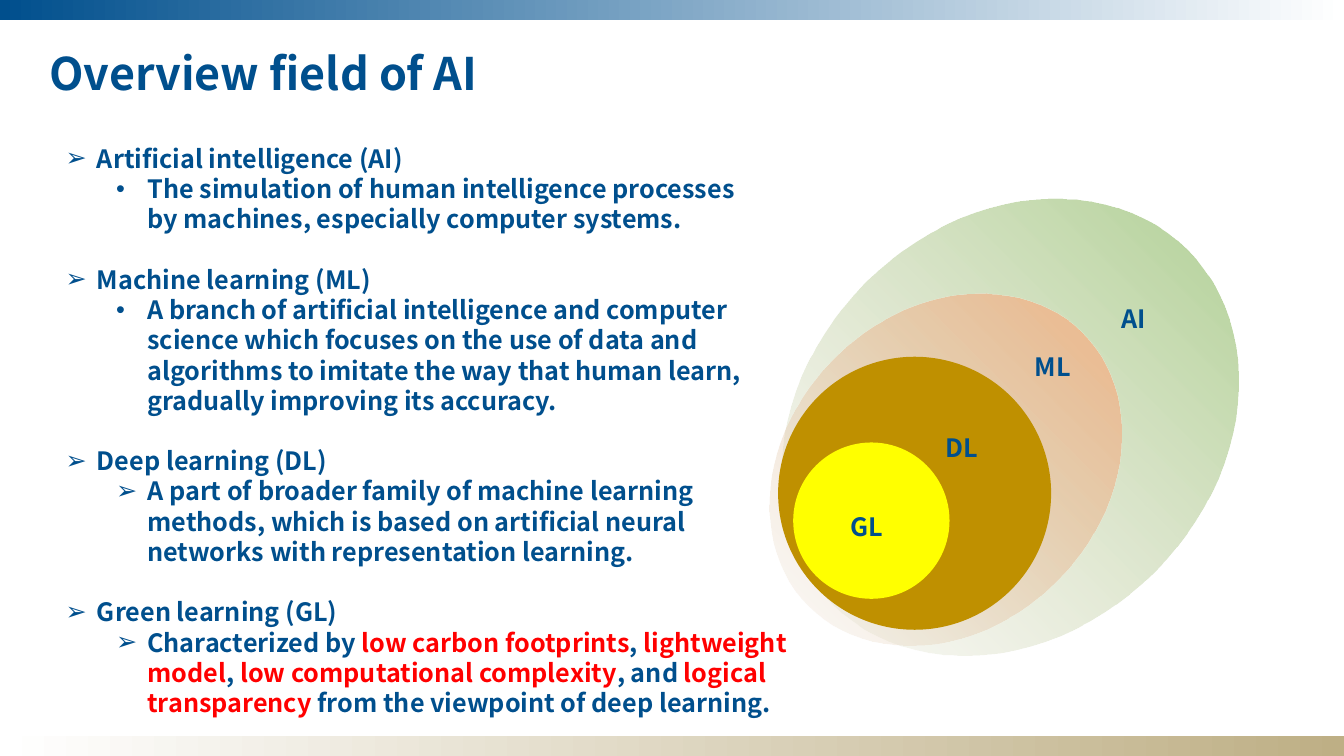
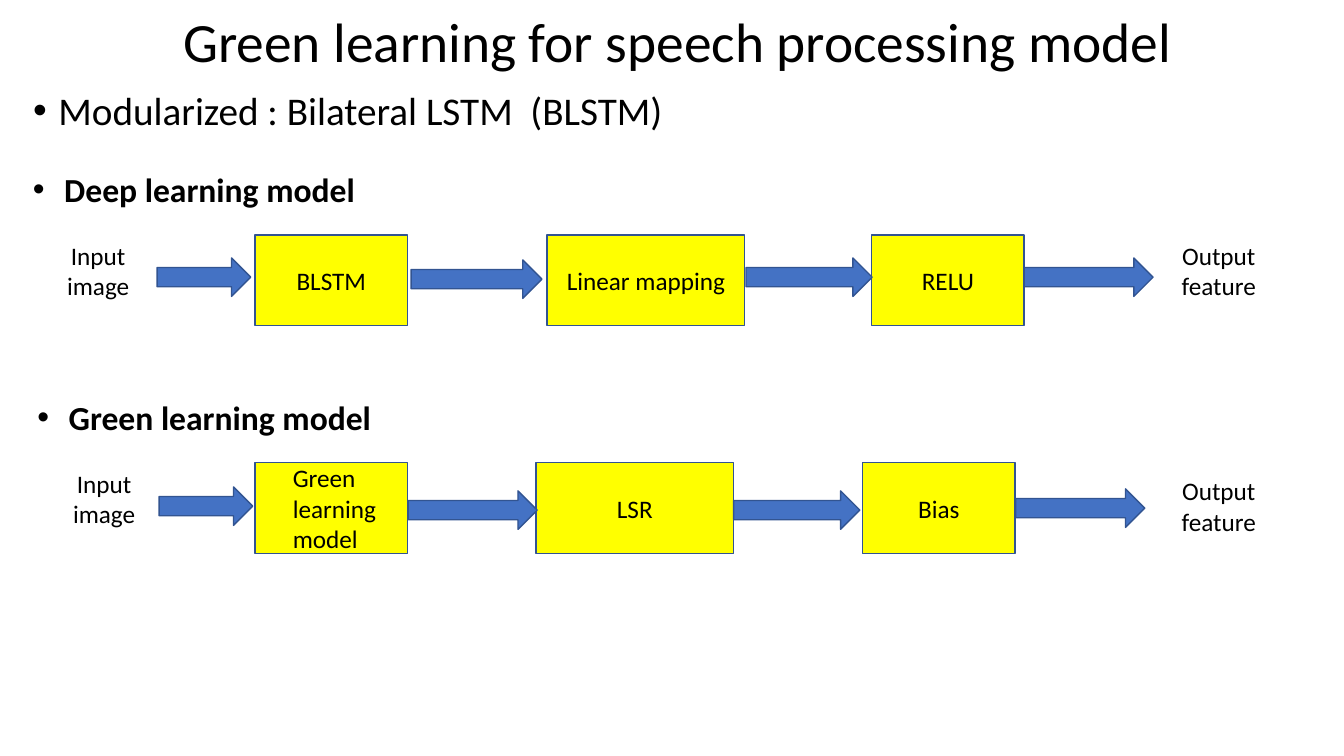
from lxml import etree
from pptx import Presentation
from pptx.dml.color import RGBColor
from pptx.enum import shapes, text
from pptx.oxml import ns
from pptx.util import Cm, Pt

# Shared colours, fonts and sizes
NAVY = RGBColor(0x00, 0x4F, 0x8D)
SAND = RGBColor(0xBE, 0xAF, 0x85)
PALE_SAND = RGBColor(0xDE, 0xD6, 0xC1)
GREEN = RGBColor(0xA9, 0xD1, 0x8E)
ORANGE = RGBColor(0xF4, 0xB1, 0x83)
GOLD = RGBColor(0xBF, 0x90, 0x00)
YELLOW = RGBColor(0xFF, 0xFF, 0x00)
BLUE = RGBColor(0x44, 0x72, 0xC4)
OUTLINE = RGBColor(0x32, 0x54, 0x91)
RED = RGBColor(0xFF, 0x00, 0x00)
BLACK = RGBColor(0x00, 0x00, 0x00)
WHITE = RGBColor(0xFF, 0xFF, 0xFF)

NOTO = "Noto Sans CJK SC"
CALIBRI = "Calibri"
SLIDE_WIDTH, SLIDE_HEIGHT, BAND_HEIGHT = 33.87, 19.05, 0.51
BOX_HEIGHT, ARROW_HEIGHT = 2.29, 0.97

SHAPE = shapes.MSO_SHAPE
ALIGN = text.PP_ALIGN
ANCHOR = text.MSO_ANCHOR

# Text styles: font name, size, colour, bold
OVERVIEW_TITLE = (NOTO, 32, NAVY, True)
OVERVIEW_TEXT = (NOTO, 18, NAVY, True)
MODEL_TITLE = (CALIBRI, 39.6, BLACK, False)
MODEL_BODY = (CALIBRI, 28, BLACK, False)
MODEL_HEADING = (CALIBRI, 24, BLACK, True)
MODEL_LABEL = (CALIBRI, 18, BLACK, False)

# Slide 1 content: term, bullet of the explanation, its lines (*red*)
TERMS = [
    ("Artificial intelligence (AI)", "•",
     ["The simulation of human intelligence processes",
      "by machines, especially computer systems."]),
    ("Machine learning (ML)", "•",
     ["A branch of artificial intelligence and computer",
      "science which focuses on the use of data and",
      "algorithms to imitate the way that human learn,",
      "gradually improving its accuracy."]),
    ("Deep learning (DL)", "➢",
     ["A part of broader family of machine learning",
      "methods, which is based on artificial neural",
      "networks with representation learning."]),
    ("Green learning (GL)", "➢",
     ["Characterized by *low carbon footprints*, *lightweight*",
      "*model*, *low computational complexity*, and *logical*",
      "*transparency* from the viewpoint of deep learning."]),
]
FIELD_LABELS = [("GL", 21.18, 12.75), ("DL", 23.57, 10.77),
                ("ML", 25.83, 8.74), ("AI", 28.02, 7.52)]

# Slide 2 content: boxes are (lines, left, width), arrows (left, top, width)
PIPELINES = [
    {"heading": ("Deep learning model", 0.58, 4.14),
     "box_top": 5.92,
     "boxes": [(["BLSTM"], 6.43, 3.84),
               (["Linear mapping"], 13.79, 4.98),
               (["RELU"], 21.97, 3.84)],
     "arrows": [(3.96, 6.5, 2.36), (10.36, 6.55, 3.3),
                (18.8, 6.5, 3.18), (25.81, 6.5, 3.25)],
     "ends": [(["Input", "image"], 1.42, 5.92, 2.11),
              (["Output", "feature"], 29.46, 5.92, 2.51)]},
    {"heading": ("Green learning model", 0.69, 9.88),
     "box_top": 11.66,
     "boxes": [(["Green", "learning", "model"], 6.43, 3.84),
               (["LSR"], 13.51, 4.98),
               (["Bias"], 21.74, 3.84)],
     "arrows": [(4.01, 12.27, 2.36), (10.29, 12.37, 3.25),
                (18.49, 12.37, 3.18), (25.6, 12.32, 3.25)],
     "ends": [(["Input", "image"], 1.57, 11.68, 2.11),
              (["Output", "feature"], 29.46, 11.86, 2.51)]},
]


# Text helpers
def add_run(paragraph, words, style, color=None):
    name, size, style_color, bold = style
    run = paragraph.add_run()
    run.text = words
    run.font.name = name
    run.font.size = Pt(size)
    run.font.bold = bold
    run.font.color.rgb = color or style_color


def set_bullet(paragraph, character, left, hanging):
    properties = paragraph._p.get_or_add_pPr()
    properties.set("marL", str(Cm(left)))
    properties.set("indent", str(-Cm(hanging)))
    etree.SubElement(properties, ns.qn("a:buFont"), typeface="Arial")
    etree.SubElement(properties, ns.qn("a:buChar"), char=character)


def next_paragraph(frame, is_first):
    return frame.paragraphs[0] if is_first else frame.add_paragraph()


def write_lines(frame, lines, style, align=ALIGN.LEFT):
    for index, line in enumerate(lines):
        paragraph = next_paragraph(frame, index == 0)
        paragraph.alignment = align
        add_run(paragraph, line, style)


def add_label(slide, lines, style, left, top, width, height,
              align=ALIGN.LEFT):
    box = slide.shapes.add_textbox(Cm(left), Cm(top), Cm(width), Cm(height))
    box.text_frame.word_wrap = True
    write_lines(box.text_frame, lines, style, align)
    return box


def place_frame(placeholder, left, top, width, height, anchor):
    placeholder.left, placeholder.top = Cm(left), Cm(top)
    placeholder.width, placeholder.height = Cm(width), Cm(height)
    frame = placeholder.text_frame
    frame.word_wrap = True
    frame.auto_size = text.MSO_AUTO_SIZE.NONE
    frame.vertical_anchor = anchor
    return frame


def set_title(slide, words, style, bounds, align):
    frame = place_frame(slide.shapes.title, *bounds, ANCHOR.MIDDLE)
    write_lines(frame, [words], style, align)
    return frame.paragraphs[0]


# Shape helpers
def add_shape(slide, kind, left, top, width, height, fill=None, line=None):
    shape = slide.shapes.add_shape(kind, Cm(left), Cm(top),
                                   Cm(width), Cm(height))
    shape.shadow.inherit = False
    if fill is not None:
        shape.fill.solid()
        shape.fill.fore_color.rgb = fill
    if line is None:
        shape.line.fill.background()
    else:
        shape.line.color.rgb = line
        shape.line.width = Pt(1)
    return shape


def fill_gradient(shape, start, end, end_alpha=None):
    shape.fill.gradient()
    shape.fill.gradient_angle = 0
    for stop, color in zip(shape.fill.gradient_stops, (start, end)):
        stop.color.rgb = color
    if end_alpha is not None:
        end_color = list(shape._element.iter(ns.qn("a:srgbClr")))[1]
        etree.SubElement(end_color, ns.qn("a:alpha"),
                         val=str(end_alpha * 1000))


def add_band(slide, top, start, end):
    band = add_shape(slide, SHAPE.RECTANGLE, 0, top, SLIDE_WIDTH, BAND_HEIGHT)
    fill_gradient(band, start, end)


def add_fading_ellipse(slide, color, *bounds):
    ellipse = add_shape(slide, SHAPE.OVAL, *bounds)
    ellipse.rotation = 135
    fill_gradient(ellipse, color, PALE_SAND, 10)


# Slide 1: list of terms and nested fields
def write_term(frame, is_first, term, bullet, lines):
    heading = next_paragraph(frame, is_first)
    set_bullet(heading, "➢", 2.06, 0.79)
    heading.space_before = Pt(0 if is_first else 21.6)
    add_run(heading, term, OVERVIEW_TEXT)

    explanation = frame.add_paragraph()
    explanation.level = 1
    set_bullet(explanation, bullet, 3.33, 0.79)
    explanation.space_before = Pt(0)
    for line_index, line in enumerate(lines):
        if line_index:
            explanation.add_line_break()
        for part_index, part in enumerate(line.split("*")):
            if part:
                add_run(explanation, part, OVERVIEW_TEXT,
                        RED if part_index % 2 else NAVY)


def build_overview(slide):
    add_fading_ellipse(slide, GREEN, 19.15, 5.61, 12.62, 10.29)
    add_fading_ellipse(slide, ORANGE, 18.97, 7.87, 9.73, 7.92)
    add_shape(slide, SHAPE.OVAL, 19.61, 8.99, 6.88, 6.88, GOLD)
    add_shape(slide, SHAPE.OVAL, 19.99, 11.15, 3.94, 3.94, YELLOW)
    for words, left, top in FIELD_LABELS:
        add_label(slide, [words], OVERVIEW_TEXT, left, top, 3.58, 1.02)

    add_band(slide, 0, NAVY, WHITE)
    add_band(slide, SLIDE_HEIGHT - BAND_HEIGHT, WHITE, SAND)
    set_title(slide, "Overview field of AI", OVERVIEW_TITLE,
              (0.99, 1.02, 13.06, 1.63), ALIGN.LEFT)
    frame = place_frame(slide.placeholders[1], 0.13, 3.48, 20.5, 14.88,
                        ANCHOR.TOP)
    for index, term in enumerate(TERMS):
        write_term(frame, index == 0, *term)


# Slide 2: two processing pipelines
def add_step(slide, lines, left, top, width):
    box = add_shape(slide, SHAPE.RECTANGLE, left, top, width, BOX_HEIGHT,
                    YELLOW, OUTLINE)
    frame = box.text_frame
    frame.word_wrap = True
    frame.vertical_anchor = ANCHOR.MIDDLE
    frame.margin_top = frame.margin_bottom = 0
    is_list = len(lines) > 1
    if is_list:
        frame.margin_left = Cm(0.95)
    write_lines(frame, lines, MODEL_LABEL,
                ALIGN.LEFT if is_list else ALIGN.CENTER)


def add_pipeline(slide, pipeline):
    words, left, top = pipeline["heading"]
    heading = add_label(slide, [], MODEL_HEADING, left, top, 9.2, 1.27)
    paragraph = heading.text_frame.paragraphs[0]
    set_bullet(paragraph, "•", 0.79, 0.79)
    add_run(paragraph, words, MODEL_HEADING)

    for lines, left, width in pipeline["boxes"]:
        add_step(slide, lines, left, pipeline["box_top"], width)
    for left, top, width in pipeline["arrows"]:
        add_shape(slide, SHAPE.RIGHT_ARROW, left, top, width, ARROW_HEIGHT,
                  BLUE, OUTLINE)
    for lines, left, top, width in pipeline["ends"]:
        add_label(slide, lines, MODEL_LABEL, left, top, width, 1.8,
                  ALIGN.CENTER)


def build_models(slide):
    title = set_title(slide, "Green learning for speech processing model",
                      MODEL_TITLE, (0.58, 0.38, 32.99, 1.5), ALIGN.CENTER)
    title.line_spacing = 0.9
    frame = place_frame(slide.placeholders[1], 0.58, 2.18, 32.66, 1.6,
                        ANCHOR.TOP)
    paragraph = frame.paragraphs[0]
    set_bullet(paragraph, "•", 0.64, 0.64)
    paragraph.line_spacing = 0.9
    paragraph.space_before = Pt(0)
    add_run(paragraph, "Modularized : Bilateral LSTM  (BLSTM)", MODEL_BODY)
    for pipeline in PIPELINES:
        add_pipeline(slide, pipeline)


def main():
    presentation = Presentation()
    presentation.slide_width = Cm(SLIDE_WIDTH)
    presentation.slide_height = Cm(SLIDE_HEIGHT)
    layout = presentation.slide_layouts[1]
    for build in (build_overview, build_models):
        build(presentation.slides.add_slide(layout))
    presentation.save("out.pptx")


if __name__ == "__main__":
    main()
